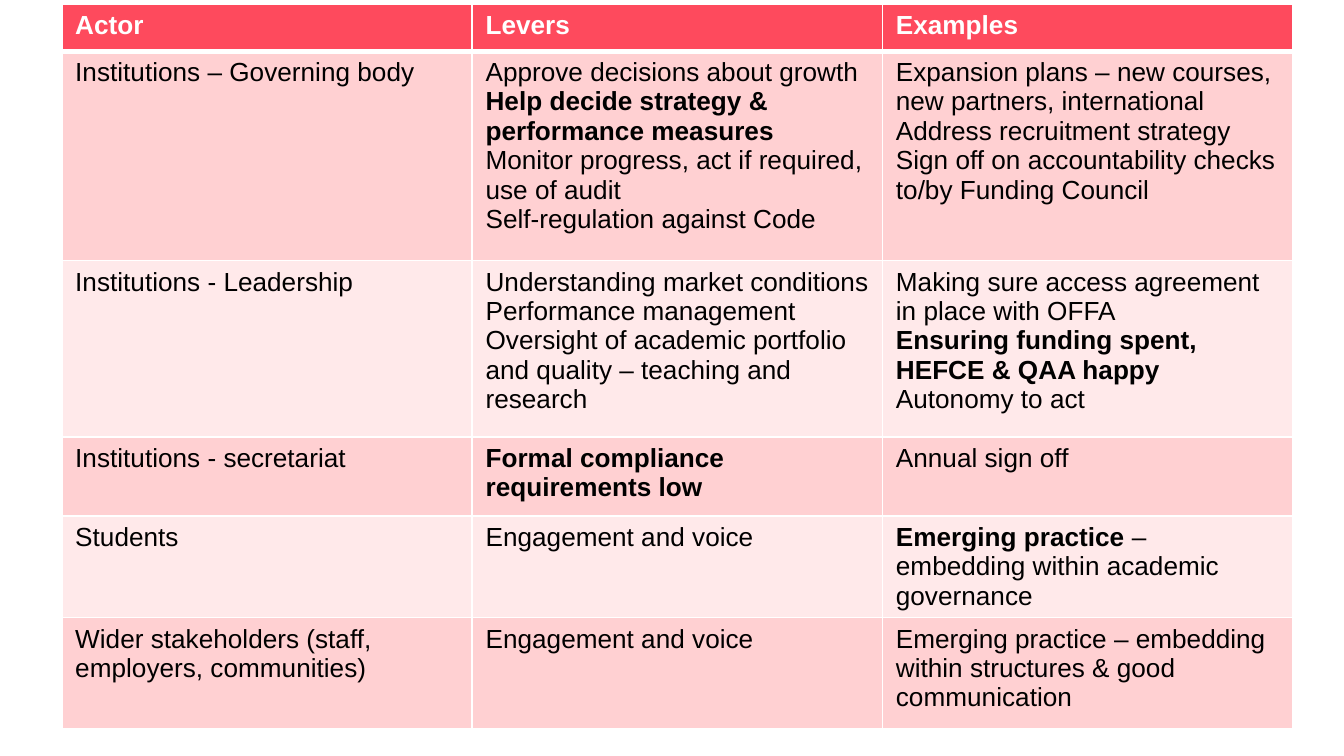
from dataclasses import dataclass

from lxml.etree import SubElement
from pptx import Presentation
from pptx.dml.color import RGBColor
from pptx.oxml.ns import qn
from pptx.util import Inches, Pt


@dataclass(frozen=True)
class Theme:
    font: str = "Arial"
    text_size: int = 14
    header_text: str = "FFFFFF"
    body_text: str = "000000"
    header_fill: str = "FE4A5D"
    band_fills: tuple = ("FFD0D2", "FFE9EA")
    border: str = "FFFFFF"
    border_width: int = 1
    header_rule_width: int = 3


THEME = Theme()
SLIDE_WIDTH = 10
SLIDE_HEIGHT = SLIDE_WIDTH * 9 / 16
TABLE_LEFT, TABLE_TOP, TABLE_WIDTH = 0.46, 0.03, 9.16
ROW_HEIGHTS = [0.35, 1.56, 1.31, 0.59, 0.59, 0.83]

# Each cell is a list of paragraphs; ** switches bold on and off.
HEADERS = ["Actor", "Levers", "Examples"]
ACTOR_ROWS = [
    [
        ["Institutions – Governing body"],
        [
            "Approve decisions about growth",
            "**Help decide strategy & performance measures**",
            "Monitor progress, act if required, use of audit",
            "Self-regulation against Code",
        ],
        [
            "Expansion plans – new courses, new partners, international",
            "Address recruitment strategy",
            "Sign off on accountability checks to/by Funding Council",
        ],
    ],
    [
        ["Institutions - Leadership"],
        [
            "Understanding market conditions",
            "Performance management",
            "Oversight of academic portfolio and quality – teaching and research",
        ],
        [
            "Making sure access agreement in place with OFFA",
            "**Ensuring funding spent, HEFCE & QAA happy**",
            "Autonomy to act",
        ],
    ],
    [
        ["Institutions - secretariat"],
        ["**Formal compliance requirements low**"],
        ["Annual sign off"],
    ],
    [
        ["Students"],
        ["Engagement and voice"],
        ["**Emerging practice **– embedding within academic governance"],
    ],
    [
        ["Wider stakeholders (staff, employers, communities)"],
        ["Engagement and voice"],
        ["Emerging practice – embedding within structures & good communication"],
    ],
]


def add_runs(paragraph, marked_text, color):
    for index, part in enumerate(marked_text.split("**")):
        if not part:
            continue
        run = paragraph.add_run()
        run.text = part
        run.font.name = THEME.font
        run.font.size = Pt(THEME.text_size)
        run.font.bold = index % 2 == 1
        run.font.color.rgb = RGBColor.from_string(color)


def set_borders(cell, top_width, bottom_width):
    properties = cell._tc.get_or_add_tcPr()
    widths = {
        "a:lnL": THEME.border_width,
        "a:lnR": THEME.border_width,
        "a:lnT": top_width,
        "a:lnB": bottom_width,
    }
    for tag, width in widths.items():
        line = SubElement(properties, qn(tag), w=str(Pt(width)))
        fill = SubElement(line, qn("a:solidFill"))
        SubElement(fill, qn("a:srgbClr"), val=THEME.border)


def fill_cell(cell, paragraphs, text_color, fill_color, top_width, bottom_width):
    # Borders come before the fill in the cell's properties
    set_borders(cell, top_width, bottom_width)
    cell.fill.solid()
    cell.fill.fore_color.rgb = RGBColor.from_string(fill_color)
    text_frame = cell.text_frame
    for index, text in enumerate(paragraphs):
        paragraph = text_frame.add_paragraph() if index else text_frame.paragraphs[0]
        add_runs(paragraph, text, text_color)


def add_actor_table(slide):
    shape = slide.shapes.add_table(
        len(ROW_HEIGHTS), len(HEADERS),
        Inches(TABLE_LEFT), Inches(TABLE_TOP),
        Inches(TABLE_WIDTH), Inches(sum(ROW_HEIGHTS)),
    )
    table = shape.table
    for row, height in zip(table.rows, ROW_HEIGHTS):
        row.height = Inches(height)

    # Header row, with a thicker rule below
    thin, thick = THEME.border_width, THEME.header_rule_width
    for column, header in enumerate(HEADERS):
        fill_cell(table.cell(0, column), [f"**{header}**"],
                  THEME.header_text, THEME.header_fill, thin, thick)

    # Banded body rows
    for row, cells in enumerate(ACTOR_ROWS, start=1):
        band = THEME.band_fills[(row - 1) % 2]
        top_width = thick if row == 1 else thin
        for column, paragraphs in enumerate(cells):
            fill_cell(table.cell(row, column), paragraphs,
                      THEME.body_text, band, top_width, thin)


def main():
    presentation = Presentation()
    presentation.slide_width = Inches(SLIDE_WIDTH)
    presentation.slide_height = Inches(SLIDE_HEIGHT)
    blank_layout = presentation.slide_layouts[6]
    slide = presentation.slides.add_slide(blank_layout)
    add_actor_table(slide)
    presentation.save("out.pptx")


if __name__ == "__main__":
    main()
